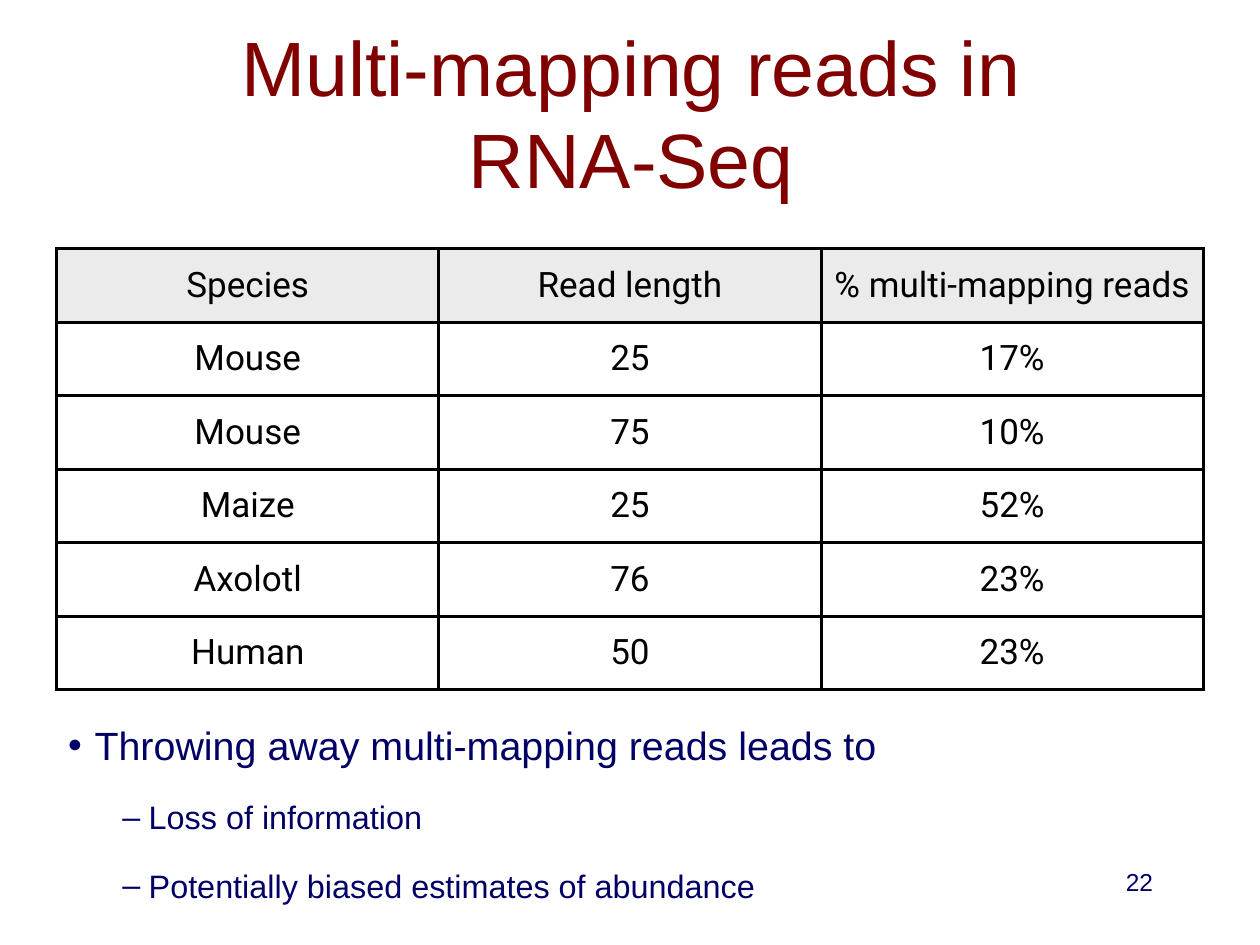
from lxml.etree import SubElement as Sub
from pptx import Presentation
from pptx.dml.color import RGBColor as RGB
from pptx.enum.text import MSO_ANCHOR as Anchor, MSO_AUTO_SIZE as Auto, PP_ALIGN as Align
from pptx.oxml.ns import qn
from pptx.util import Inches, Pt

WIDE, HIGH = Inches(10), Inches(7.5)
HUES = {"title": "800000", "body": "000066", "ink": "000000", "head": "EBEBEB"}
ROWS = [
    ("Species", "Read length", "% multi-mapping reads"),
    ("Mouse", "25", "17%"),
    ("Mouse", "75", "10%"),
    ("Maize", "25", "52%"),
    ("Axolotl", "76", "23%"),
    ("Human", "50", "23%"),
]
POINTS = [
    (0, "Throwing away multi-mapping reads leads to"),
    (1, "Loss of information"),
    (1, "Potentially biased estimates of abundance"),
]
# Size, bullet sign and text indent of each list level
LEVELS = [(22.5, "•", 0.21), (18.5, "–", 0.64)]
HANG = 0.21


def share(x, y, w, h):
    """Turn shares of the slide's size into a box of lengths."""
    return [int(n) for n in (x * WIDE, y * HIGH, w * WIDE, h * HIGH)]


def place(shape, box):
    shape.left, shape.top, shape.width, shape.height = box


def write(para, text, size, hue, font="Arial", align=None):
    para.alignment = align
    run = para.add_run()
    run.text = text
    run.font.size = Pt(size)
    run.font.name = font
    run.font.color.rgb = RGB.from_string(HUES[hue])


def frame(cell, width=2):
    """Draw a solid line on all four sides of a cell."""
    props = cell._tc.get_or_add_tcPr()
    for n, side in enumerate(("lnL", "lnR", "lnT", "lnB")):
        line = props.makeelement(qn(f"a:{side}"), {"w": str(Pt(width))})
        props.insert(n, line)
        fill = Sub(line, qn("a:solidFill"))
        Sub(fill, qn("a:srgbClr"), val=HUES["ink"])


def add_title(slide, box):
    title = slide.shapes.title
    place(title, box)
    text = title.text_frame
    text.auto_size = Auto.NONE
    text.vertical_anchor = Anchor.MIDDLE
    write(text.paragraphs[0], "Multi-mapping reads in RNA-Seq", 44, "title",
          align=Align.CENTER)


def add_grid(slide, box):
    table = slide.shapes.add_table(len(ROWS), len(ROWS[0]), *box).table
    table.horz_banding = False
    for r, row in enumerate(ROWS):
        for c, text in enumerate(row):
            cell = table.cell(r, c)
            cell.vertical_anchor = Anchor.MIDDLE
            cell.margin_left = cell.margin_right = Inches(0.04)
            cell.margin_top = cell.margin_bottom = Inches(0.04)
            if r == 0:
                cell.fill.solid()
                cell.fill.fore_color.rgb = RGB.from_string(HUES["head"])
            else:
                cell.fill.background()
            frame(cell)
            para = cell.text_frame.paragraphs[0]
            write(para, text, 20, "ink", font="Roboto", align=Align.CENTER)
            para.runs[0].font.bold = False


def add_list(slide, box):
    body = slide.placeholders[1]
    place(body, box)
    text = body.text_frame
    text.auto_size = Auto.NONE
    for n, (level, words) in enumerate(POINTS):
        para = text.add_paragraph() if n else text.paragraphs[0]
        size, sign, indent = LEVELS[level]
        para.level = level
        para.space_before = Pt(16.9)
        write(para, words, size, "body")
        props = para._p.get_or_add_pPr()
        props.set("marL", str(Inches(indent)))
        props.set("indent", str(Inches(-HANG)))
        Sub(props, qn("a:buChar"), char=sign)


def add_number(slide, box):
    text = slide.shapes.add_textbox(*box).text_frame
    text.word_wrap = True
    write(text.paragraphs[0], "22", 14, "body", align=Align.RIGHT)


def main():
    deck = Presentation()
    deck.slide_width, deck.slide_height = WIDE, HIGH
    slide = deck.slides.add_slide(deck.slide_layouts[1])
    add_title(slide, share(0.147, 0.035, 0.708, 0.167))
    add_grid(slide, share(0.045, 0.263, 0.91, 0.467))
    add_list(slide, share(0.044, 0.756, 0.914, 0.285))
    add_number(slide, share(0.717, 0.911, 0.208, 0.067))
    deck.save("out.pptx")


if __name__ == "__main__":
    main()
